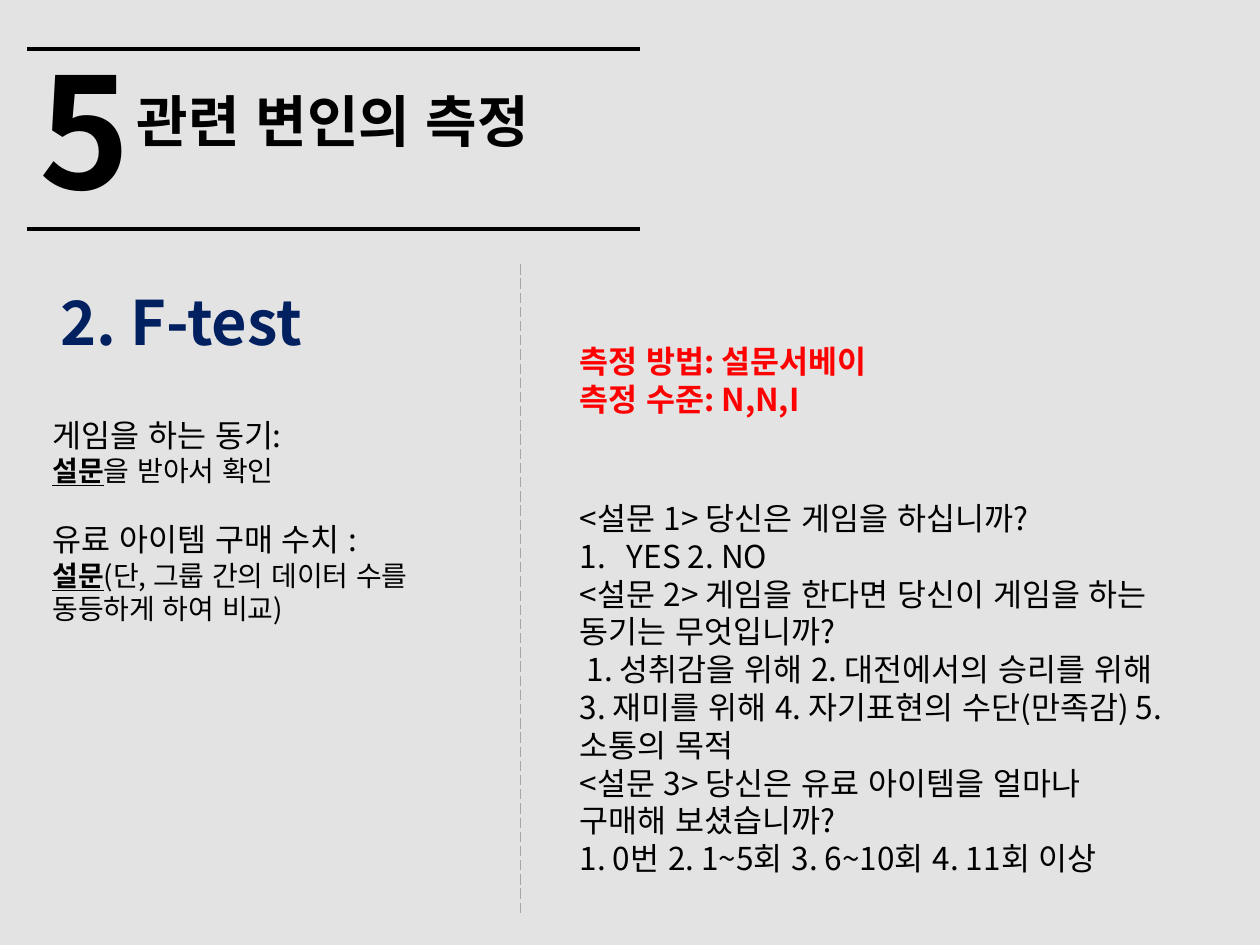
from lxml.etree import SubElement
from pptx import Presentation
from pptx.dml.color import RGBColor
from pptx.enum.dml import MSO_LINE_DASH_STYLE as Dash
from pptx.enum.lang import MSO_LANGUAGE_ID as Language
from pptx.enum.shapes import MSO_CONNECTOR as Connector
from pptx.enum.text import MSO_ANCHOR as Anchor, MSO_AUTO_SIZE as AutoSize, PP_ALIGN as Align
from pptx.oxml.ns import qn
from pptx.util import Pt

COLORS = {
    "background": "E3E3E3",
    "text": "000000",
    "heading": "002060",
    "accent": "FF0000",
    "divider": "A6A6A6",
}
FONT = "Noto Sans CJK KR"


class SlideBuilder:
    """Holds the style and the current slide."""

    def __init__(self, slide):
        self.slide = slide

    def color(self, name):
        return RGBColor.from_string(COLORS[name])

    def background(self, color):
        fill = self.slide.background.fill
        fill.solid()
        fill.fore_color.rgb = self.color(color)

    def line(self, start, end, color="text", width=2, dash=None):
        connector = self.slide.shapes.add_connector(
            Connector.STRAIGHT, *(Pt(value) for value in (*start, *end)))
        connector.line.color.rgb = self.color(color)
        connector.line.width = Pt(width)
        if dash:
            connector.line.dash_style = dash
        SubElement(connector._element.spPr, qn("a:effectLst"))

    def text_box(self, box, lines, wrap=True, **style):
        shape = self.slide.shapes.add_textbox(*(Pt(value) for value in box))
        self.fill_text(shape, lines, wrap, **style)

    def placeholder(self, index, box, lines, **style):
        shape = self.slide.placeholders[index]
        shape.left, shape.top, shape.width, shape.height = (Pt(value) for value in box)
        self.fill_text(shape, lines, **style)

    def fill_text(self, shape, lines, wrap=True, **style):
        frame = shape.text_frame
        frame.text = "\n".join(lines)
        frame.word_wrap = wrap
        frame.auto_size = AutoSize.NONE
        frame.vertical_anchor = Anchor.TOP
        for paragraph in frame.paragraphs:
            paragraph.alignment = Align.LEFT
            paragraph.space_before = Pt(0)
            self.marker(paragraph)
            for run in paragraph.runs:
                self.format_run(run, **style)

    def marker(self, paragraph, indent=0, numbered=False):
        """Set the hanging indent and either a number or no bullet."""
        properties = paragraph._p.get_or_add_pPr()
        properties.set("marL", str(Pt(indent)))
        properties.set("indent", str(-Pt(indent)))
        for old in properties.findall(qn("a:buNone")):
            properties.remove(old)
        if numbered:
            SubElement(properties, qn("a:buFont")).set("typeface", FONT)
            SubElement(properties, qn("a:buAutoNum")).set("type", "arabicPeriod")
        else:
            SubElement(properties, qn("a:buNone"))

    def format_run(self, run, size=18, color="text", bold=False, underline=False):
        font = run.font
        font.size, font.bold, font.underline = Pt(size), bold, underline
        font.color.rgb = self.color(color)
        font.name = FONT
        font.language_id = Language.KOREAN
        properties = run._r.get_or_add_rPr()
        if properties.find(qn("a:ea")) is None:
            SubElement(properties, qn("a:ea")).set("typeface", FONT)

    def emphasize_lead(self, paragraph, rest, size=16):
        """Underline the paragraph's text and continue it plainly."""
        self.format_run(paragraph.runs[0], size, bold=True, underline=True)
        run = paragraph.add_run()
        run.text = rest
        self.format_run(run, size)


def main():
    presentation = Presentation()
    presentation.slide_width, presentation.slide_height = Pt(720), Pt(540)
    slide = presentation.slides.add_slide(presentation.slide_layouts[3])
    builder = SlideBuilder(slide)
    builder.background("background")

    for y in (28, 131):
        builder.line((15.3, y), (365.8, y))
    builder.line((297.4, 151), (297.4, 522), "divider", 0.75, Dash.LONG_DASH)

    builder.text_box((15.3, 16.7, 60, 114), ["5"], size=88, bold=True)
    builder.placeholder(0, (71, 46, 307.5, 46), ["관련 변인의 측정"], size=32, bold=True)
    builder.text_box((27.4, 159, 152.6, 50), ["2. F-test"], wrap=False,
                     size=35, color="heading", bold=True)
    builder.text_box((324, 192, 196, 51), ["측정 방법: 설문서베이", "측정 수준: N,N,I"],
                     wrap=False, color="accent", bold=True)

    builder.placeholder(1, (22.8, 234, 249, 128), [
        "게임을 하는 동기:", "설문", "유료 아이템 구매 수치 :", "설문"])
    _, motive_method, purchase, purchase_method = (
        slide.placeholders[1].text_frame.paragraphs)
    builder.emphasize_lead(motive_method, "을 받아서 확인")
    purchase.space_before = Pt(19)
    builder.emphasize_lead(purchase_method, "(단, 그룹 간의 데이터 수를 동등하게 하여 비교)")

    builder.placeholder(2, (324, 281.5, 351.4, 247), [
        "<설문 1> 당신은 게임을 하십니까?",
        "YES 2. NO",
        "<설문 2> 게임을 한다면 당신이 게임을 하는 동기는 무엇입니까?",
        " 1. 성취감을 위해 2. 대전에서의 승리를 위해 3. 재미를 위해 "
        "4. 자기표현의 수단(만족감) 5. 소통의 목적",
        "<설문 3> 당신은 유료 아이템을 얼마나 구매해 보셨습니까?",
        "1. 0번 2. 1~5회 3. 6~10회 4. 11회 이상",
    ])
    builder.marker(slide.placeholders[2].text_frame.paragraphs[1], 27, numbered=True)

    presentation.save("out.pptx")


if __name__ == "__main__":
    main()
